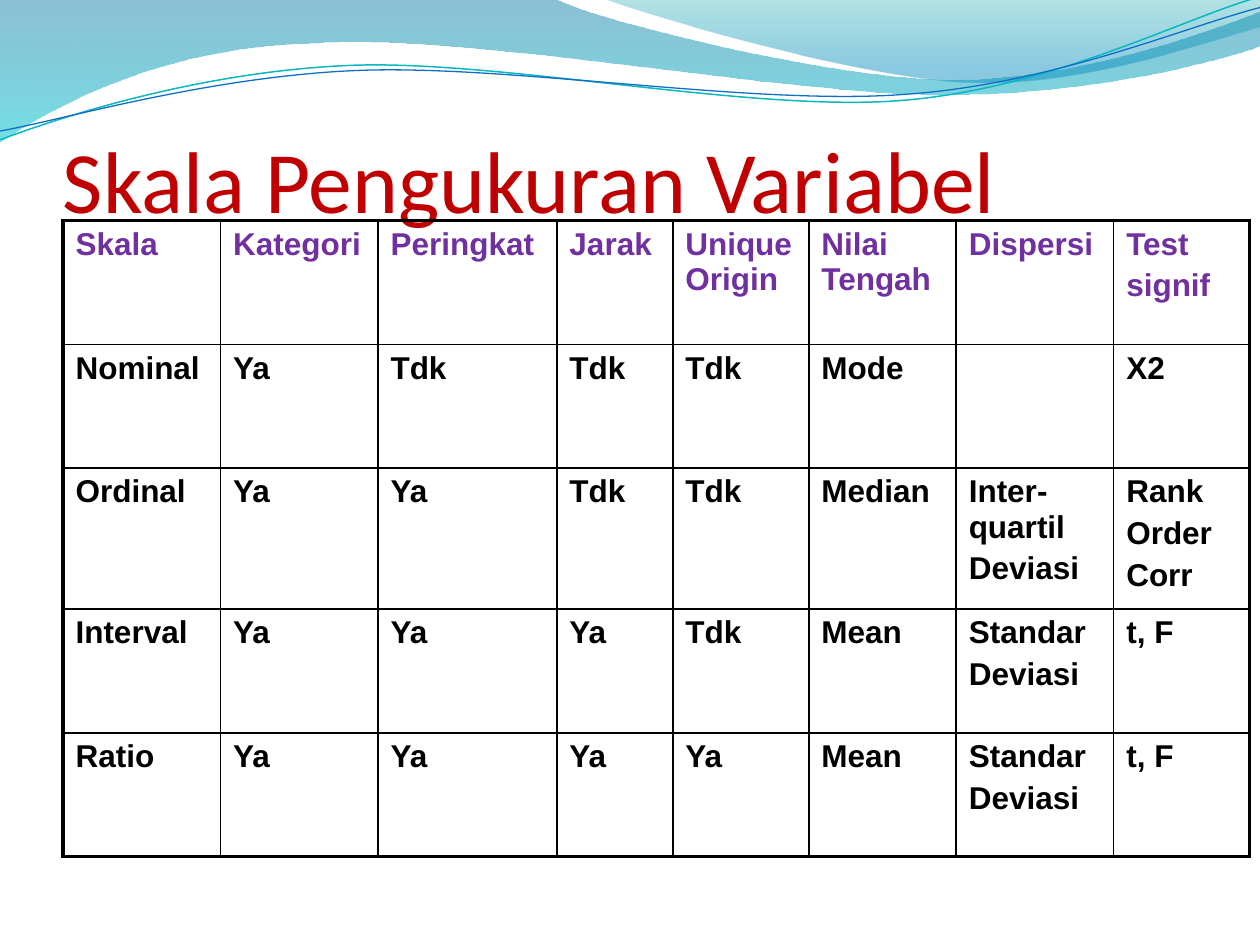
from dataclasses import dataclass

from lxml import etree
from pptx import Presentation
from pptx.dml.color import RGBColor
from pptx.enum.text import MSO_ANCHOR
from pptx.oxml.ns import qn
from pptx.slide import Slide
from pptx.util import Inches, Pt

BOTTOM = MSO_ANCHOR.BOTTOM
BLACK = RGBColor(0x00, 0x00, 0x00)
RED = RGBColor(0xC0, 0x00, 0x00)
PURPLE = RGBColor(0x70, 0x30, 0xA0)
DEEP_BLUE = RGBColor(0x00, 0x74, 0xA1)
CYAN = RGBColor(0x00, 0xC6, 0xCF)
TEAL = RGBColor(0x00, 0xA1, 0xA9)
SKY = RGBColor(0x00, 0x8B, 0xBF)
AQUA_LINE = RGBColor(0x0A, 0xB8, 0xBF)
BLUE_LINE = RGBColor(0x0F, 0x6F, 0xC6)

TITLE_FONT = {"name": "Calibri", "size": Pt(50)}
CELL_FONT = {"name": "Arial", "size": Pt(18), "bold": True}
INNER_BORDER, OUTER_BORDER = Pt(1), Pt(2.25)

COLUMN_WIDTHS = [1.25, 1.25, 1.42, 0.92, 1.08, 1.17, 1.25, 1.08]
TABLE_HEIGHT, TALL_ROW = 5.05, 1.12
PLAIN_ROW = (TABLE_HEIGHT - TALL_ROW) / 4
ROW_HEIGHTS = [PLAIN_ROW, PLAIN_ROW, TALL_ROW, PLAIN_ROW, PLAIN_ROW]
SCALES = [
    ["Skala", "Kategori", "Peringkat", "Jarak", "Unique Origin", "Nilai Tengah",
     "Dispersi", "Test\nsignif"],
    ["Nominal", "Ya", "Tdk", "Tdk", "Tdk", "Mode", "", "X2"],
    ["Ordinal", "Ya", "Ya", "Tdk", "Tdk", "Median", "Inter-quartil\nDeviasi",
     "Rank\nOrder\nCorr"],
    ["Interval", "Ya", "Ya", "Ya", "Tdk", "Mean", "Standar\nDeviasi", "t, F"],
    ["Ratio", "Ya", "Ya", "Ya", "Ya", "Mean", "Standar\nDeviasi", "t, F"],
]

LEFT_WAVE = [
    (0, 0), (4.4, -0.01),
    (4.76, 0.17, 6.64, 0.63, 7.58, 0.63), (8.53, 0.63, 9.58, 0.26, 10, 0.09),
    (10.01, 0.36),
    (9.83, 0.44, 8.7, 0.76, 7.46, 0.75), (6.22, 0.75, 3.82, 0.28, 2.57, 0.34),
    (1.29, 0.36, 0.46, 0.83, -0.01, 1.13), (0, 0),
]
RIGHT_WAVE = [
    (4.79, -0.01),
    (5.09, 0.11, 6.82, 0.62, 7.69, 0.65), (8.56, 0.69, 9.61, 0.32, 10, 0.21),
    (10, 0), (4.79, -0.01),
]
AQUA_STRAND = [
    (0, 1.11),
    (0.48, 0.93, 1.58, 0.57, 2.77, 0.52), (3.95, 0.47, 5.93, 0.89, 7.13, 0.8),
    (8.33, 0.71, 9.38, 0.15, 9.98, -0.02),
]
BLUE_STRAND = [
    (0, 1.04),
    (0.47, 0.96, 1.64, 0.61, 2.83, 0.56), (4.03, 0.51, 5.97, 0.84, 7.17, 0.75),
    (8.36, 0.67, 9.41, 0.21, 10, 0.06),
]


def apply_format(target, values):
    for attribute, value in values.items():
        setattr(target, attribute, value)


@dataclass
class ScaleSlide:
    """Draws the waves, title and table in one style on the current slide."""

    slide: Slide

    def outline(self, segments, close):
        start, *ends = [(Inches(s[-2]), Inches(s[-1])) for s in segments]
        builder = self.slide.shapes.build_freeform(*start)
        builder.add_line_segments(ends, close=close)
        shape = builder.convert_to_shape()
        shape.shadow.inherit = False
        straights = list(shape._element.iter(qn("a:lnTo")))
        for straight, segment in zip(straights, segments[1:]):
            if len(segment) == 6:
                curve = etree.Element(qn("a:cubicBezTo"))
                for x, y in zip(segment[::2], segment[1::2]):
                    etree.SubElement(curve, qn("a:pt"), x=str(Inches(x) - shape.left),
                                     y=str(Inches(y) - shape.top))
                straight.getparent().replace(straight, curve)
        return shape

    def wave(self, segments, stops):
        shape = self.outline(segments, True)
        shape.line.fill.background()
        shape.fill.gradient()
        shape.fill.gradient_angle = 270
        for stop, (position, color, opacity) in zip(shape.fill.gradient_stops, stops):
            stop.position = position
            stop.color.rgb = color
            tint = stop._gs.find(qn("a:srgbClr"))
            etree.SubElement(tint, qn("a:alpha"), val=str(opacity * 1000))

    def strand(self, segments, color, width):
        shape = self.outline(segments, False)
        shape.fill.background()
        shape.line.color.rgb = color
        shape.line.width = Pt(width)

    def title(self, text, left, top, width, height):
        frame = self.slide.shapes.add_textbox(
            Inches(left), Inches(top), Inches(width), Inches(height)).text_frame
        apply_format(frame, {"word_wrap": True, "vertical_anchor": BOTTOM, "margin_left": 0,
                             "margin_right": 0, "margin_bottom": 0})
        heading = frame.paragraphs[0].add_run()
        heading.text = text
        apply_format(heading.font, TITLE_FONT)
        heading.font.color.rgb = RED

    def borders(self, cell, widths):
        properties = cell._tc.get_or_add_tcPr()
        for index, (side, width) in enumerate(widths.items()):
            border = etree.Element(qn(f"a:ln{side}"), w=str(width))
            fill = etree.SubElement(border, qn("a:solidFill"))
            etree.SubElement(fill, qn("a:srgbClr"), val=str(BLACK))
            properties.insert(index, border)

    def cell(self, cell, text, color):
        cell.fill.background()
        if not text:
            return
        cell.text = text
        for paragraph in cell.text_frame.paragraphs:
            paragraph.space_before = Pt(3.6)
            for run in paragraph.runs:
                apply_format(run.font, CELL_FONT)
                run.font.color.rgb = color

    def table(self, rows, left, top):
        last_row, last_column = len(rows) - 1, len(rows[0]) - 1
        table = self.slide.shapes.add_table(
            len(rows), len(rows[0]), Inches(left), Inches(top),
            Inches(sum(COLUMN_WIDTHS)), Inches(TABLE_HEIGHT)).table
        apply_format(table, {"first_row": False, "horz_banding": False})
        for column, width in zip(table.columns, COLUMN_WIDTHS):
            column.width = Inches(width)
        for row, height in zip(table.rows, ROW_HEIGHTS):
            row.height = Inches(height)
        for r, texts in enumerate(rows):
            for c, text in enumerate(texts):
                cell = table.cell(r, c)
                self.cell(cell, text, BLACK if r else PURPLE)
                edges = {"L": c == 0, "R": c == last_column, "T": r == 0, "B": r == last_row}
                self.borders(cell, {side: OUTER_BORDER if outer else INNER_BORDER
                                    for side, outer in edges.items()})


def main():
    deck = Presentation()
    deck.slide_width, deck.slide_height = Inches(10), Inches(7.5)
    page = ScaleSlide(deck.slides.add_slide(deck.slide_layouts[6]))
    page.wave(LEFT_WAVE, [(0, DEEP_BLUE, 45), (1, CYAN, 55)])
    page.wave(RIGHT_WAVE, [(0, TEAL, 30), (0.8, SKY, 45)])
    page.strand(AQUA_STRAND, AQUA_LINE, 0.85)
    page.strand(BLUE_STRAND, BLUE_LINE, 0.75)
    page.title("Skala Pengukuran Variabel", 0.5, 0.32, 9, 1.51)
    page.table(SCALES, 0.5, 1.75)
    deck.save("out.pptx")


if __name__ == "__main__":
    main()
